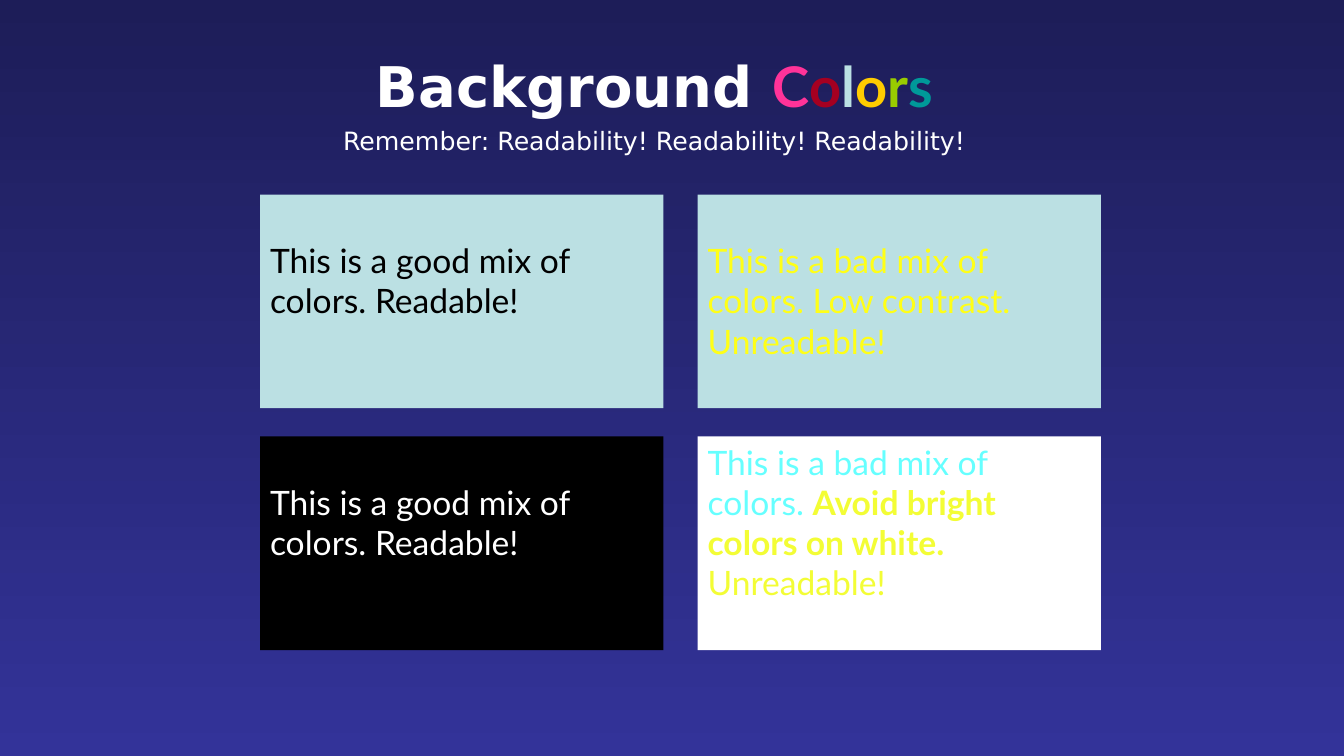
"""Build a slide on readable and unreadable text and background colours."""
from pptx import Presentation
from pptx.dml.color import RGBColor
from pptx.enum.shapes import MSO_SHAPE
from pptx.enum.text import MSO_ANCHOR, PP_ALIGN
from pptx.util import Inches, Pt

RECTANGLE = MSO_SHAPE.RECTANGLE
TOP = MSO_ANCHOR.TOP
LEFT, CENTER = PP_ALIGN.LEFT, PP_ALIGN.CENTER

NIGHT = RGBColor(0x1D, 0x1D, 0x58)
INDIGO = RGBColor(0x33, 0x33, 0x99)
WHITE = RGBColor(0xFF, 0xFF, 0xFF)
BLACK = RGBColor(0x00, 0x00, 0x00)
PALE_BLUE = RGBColor(0xBB, 0xE0, 0xE3)
YELLOW = RGBColor(0xFF, 0xFF, 0x17)
LEMON = RGBColor(0xF3, 0xFD, 0x35)
CYAN = RGBColor(0x66, 0xFF, 0xFF)
PINK = RGBColor(0xFF, 0x33, 0x99)
RED = RGBColor(0xA5, 0x00, 0x21)
GOLD = RGBColor(0xFF, 0xCC, 0x00)
GREEN = RGBColor(0x99, 0xCC, 0x00)
TEAL = RGBColor(0x00, 0x99, 0x99)

HEADING_FONT, BODY_FONT = "DejaVu Sans", "Lato"
TITLE_SIZE, REMINDER_SIZE, SAMPLE_SIZE = 40, 18, 24

COLORED_LETTERS = [("C", PINK), ("o", RED), ("l", PALE_BLUE),
                   ("o", GOLD), ("r", GREEN), ("s", TEAL)]
HEADING = [
    [("Background ", HEADING_FONT, TITLE_SIZE, WHITE, True)]
    + [(letter, BODY_FONT, TITLE_SIZE, color, True)
       for letter, color in COLORED_LETTERS],
    [("Remember: Readability! Readability! Readability!",
      HEADING_FONT, REMINDER_SIZE, WHITE, False)],
]

LOW_INSET, HIGH_INSET = 0.45, 0.05
SAMPLES = [
    (PALE_BLUE, LOW_INSET, [
        [("This is a good mix of colors. Readable!", BLACK, False)]]),
    (PALE_BLUE, LOW_INSET, [
        [("This is a bad mix of colors. Low contrast.", YELLOW, False)],
        [("Unreadable!", YELLOW, False)]]),
    (BLACK, LOW_INSET, [
        [("This is a good mix of", WHITE, False)],
        [("colors. Readable!", WHITE, False)]]),
    (WHITE, HIGH_INSET, [
        [("This is a bad mix of", CYAN, False)],
        [("colors. ", CYAN, False), ("Avoid bright", LEMON, True)],
        [("colors on white.", LEMON, True)],
        [("Unreadable!", LEMON, False)]]),
]
COLUMNS = 2
GRID_LEFT, GRID_TOP = 2.58, 1.93
SAMPLE_WIDTH, SAMPLE_HEIGHT = 4, 2.12
COLUMN_STEP, ROW_STEP = 4.34, 2.4


def write(frame, paragraphs, alignment, line_spacing):
    """Fill a text frame with paragraphs of styled runs."""
    frame.vertical_anchor = TOP
    for index, pieces in enumerate(paragraphs):
        paragraph = frame.add_paragraph() if index else frame.paragraphs[0]
        paragraph.alignment = alignment
        paragraph.line_spacing = line_spacing
        for text, font, size, color, bold in pieces:
            run = paragraph.add_run()
            run.text = text
            run.font.name = font
            run.font.size = Pt(size)
            run.font.bold = bold
            run.font.color.rgb = color


def add_heading(slide):
    """Add the title and the reminder under it."""
    heading = slide.shapes.add_textbox(
        Inches(3.25), Inches(0.33), Inches(6.48), Inches(1.26))
    heading.text_frame.word_wrap = False
    write(heading.text_frame, HEADING, CENTER, 1.2)


def add_sample(slide, index, background, inset, lines):
    """Add one colour sample at its place in the grid."""
    row, column = divmod(index, COLUMNS)
    sample = slide.shapes.add_shape(
        RECTANGLE,
        Inches(GRID_LEFT + column * COLUMN_STEP),
        Inches(GRID_TOP + row * ROW_STEP),
        Inches(SAMPLE_WIDTH), Inches(SAMPLE_HEIGHT))
    sample.shadow.inherit = False
    sample.fill.solid()
    sample.fill.fore_color.rgb = background
    sample.line.fill.background()
    sample.text_frame.word_wrap = True
    sample.text_frame.margin_top = Inches(inset)
    styled = [[(text, BODY_FONT, SAMPLE_SIZE, color, bold)
               for text, color, bold in line] for line in lines]
    write(sample.text_frame, styled, LEFT, 1.0)


def main():
    """Assemble and save the slide."""
    deck = Presentation()
    deck.slide_width, deck.slide_height = Inches(13.33), Inches(7.5)
    slide = deck.slides.add_slide(deck.slide_layouts[6])
    backdrop = slide.background.fill
    backdrop.gradient()
    backdrop.gradient_angle = 270
    for stop, color in zip(backdrop.gradient_stops, (NIGHT, INDIGO)):
        stop.color.rgb = color
    add_heading(slide)
    for index, sample in enumerate(SAMPLES):
        add_sample(slide, index, *sample)
    deck.save("out.pptx")


if __name__ == "__main__":
    main()
